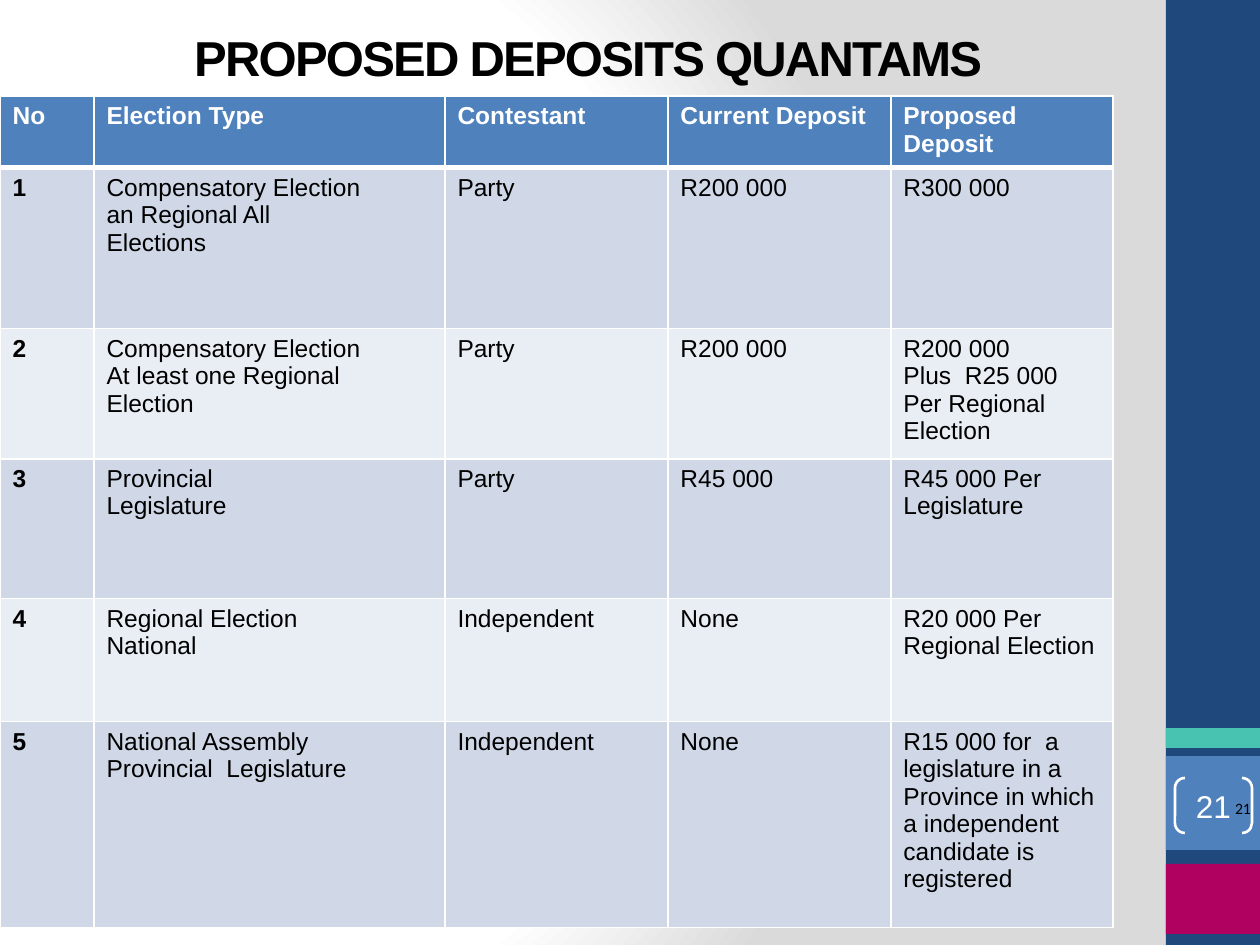
from lxml import etree
from pptx import Presentation
from pptx import util as u
from pptx.dml.color import RGBColor
from pptx.enum import shapes, text
from pptx.oxml import parse_xml
from pptx.oxml.ns import nsdecls, qn

COLORS = {
    "navy": "1F497D", "blue": "4F81BD", "teal": "48C3B1", "magenta": "B00060",
    "white": "FFFFFF", "black": "000000", "gray": "DADADA",
    "odd": "D0D8E8", "even": "E9EDF4",
}
COLUMNS = [94, 351, 223, 223, 222]
ROW_HEIGHTS = [67, 161, 123, 140, 123, 206]
DEPOSITS = [
    ["No", "Election Type", "Contestant", "Current Deposit", "Proposed Deposit"],
    ["1", "Compensatory Election\nan Regional All\nElections", "Party",
     "R200 000", "R300 000"],
    ["2", "Compensatory Election\nAt least one Regional Election", "Party",
     "R200 000", "R200 000\nPlus  R25 000 Per Regional Election"],
    ["3", "Provincial\nLegislature", "Party", "R45 000", "R45 000 Per Legislature"],
    ["4", "Regional Election\nNational", "Independent", "None",
     "R20 000 Per Regional Election"],
    ["5", "National Assembly\nProvincial  Legislature", "Independent", "None",
     "R15 000 for  a legislature in a Province in which a independent "
     "candidate is registered"],
]


def px(n):
    return u.Emu(n * 914400 // 126)


def rgb(name):
    return RGBColor.from_string(COLORS[name])


class Deck:
    font = "Arial"

    def __init__(self):
        self.prs = Presentation()
        self.prs.slide_width, self.prs.slide_height = px(1260), px(945)
        self.s = self.prs.slides.add_slide(self.prs.slide_layouts[5])

    def background(self, stops, focus):
        self.s.background.fill.gradient()
        old = self.s.element.find(".//" + qn("a:gradFill"))
        marks = "".join(
            f'<a:gs pos="{pos * 1000}"><a:srgbClr val="{COLORS[c]}"/></a:gs>'
            for pos, c in stops)
        l, t, r, b = (n * 1000 for n in focus)
        new = parse_xml(
            f'<a:gradFill {nsdecls("a")} rotWithShape="1"><a:gsLst>{marks}</a:gsLst>'
            f'<a:path path="circle"><a:fillToRect l="{l}" t="{t}" r="{r}" b="{b}"/>'
            f'</a:path></a:gradFill>')
        old.getparent().replace(old, new)

    def put_text(self, tf, words, size, color, bold=False, align=None, font=None):
        tf.text = words
        for p in tf.paragraphs:
            p.alignment = align
            for r in p.runs:
                r.font.name, r.font.size = font or self.font, u.Pt(size)
                r.font.bold, r.font.color.rgb = bold, rgb(color)

    def place(self, sp, box):
        sp.left, sp.top, sp.width, sp.height = map(px, box)

    def frame(self, tf, margins):
        tf.word_wrap, tf.vertical_anchor = True, text.MSO_ANCHOR.MIDDLE
        (tf.margin_left, tf.margin_top,
         tf.margin_right, tf.margin_bottom) = map(px, margins)

    def title(self, words, box):
        sp = self.s.shapes.title
        self.place(sp, box)
        tf = sp.text_frame
        tf.auto_size = text.MSO_AUTO_SIZE.NONE
        self.frame(tf, (13, 6, 13, 6))
        self.put_text(tf, words, 28, "black", True, text.PP_ALIGN.CENTER)
        rPr = tf.paragraphs[0].runs[0]._r.get_or_add_rPr()
        rPr.set("spc", "-100")

    def band(self, box, color):
        sp = self.s.shapes.add_shape(shapes.MSO_SHAPE.RECTANGLE, *map(px, box))
        sp.shadow.inherit = False
        sp.fill.solid()
        sp.fill.fore_color.rgb = rgb(color)
        sp.line.fill.background()

    def brackets(self, words, box):
        sp = self.s.shapes.add_shape(shapes.MSO_SHAPE.DOUBLE_BRACKET, *map(px, box))
        sp.shadow.inherit = False
        sp.adjustments[0] = 0.18
        sp.fill.background()
        sp.line.color.rgb, sp.line.width = rgb("white"), u.Pt(1.5)
        self.frame(sp.text_frame, (0, 0, 0, 0))
        self.put_text(sp.text_frame, words, 18, "white", align=text.PP_ALIGN.CENTER)

    def label(self, words, box):
        tf = self.s.shapes.add_textbox(*map(px, box)).text_frame
        self.frame(tf, (5, 5, 9, 5))
        self.put_text(tf, words, 9, "black", align=text.PP_ALIGN.RIGHT, font="Calibri")

    def borders(self, cell, bottom, top):
        tcPr = cell._tc.get_or_add_tcPr()
        for side, width in (("L", 1), ("R", 1), ("T", top), ("B", bottom)):
            ln = etree.SubElement(tcPr, qn(f"a:ln{side}"), w=str(u.Pt(width)))
            fill = etree.SubElement(ln, qn("a:solidFill"))
            etree.SubElement(fill, qn("a:srgbClr"), val=COLORS["white"])

    def table(self, rows, left, top, widths, heights):
        box = (left, top, sum(widths), sum(heights))
        tbl = self.s.shapes.add_table(len(rows), len(widths), *map(px, box)).table
        for col, width in zip(tbl.columns, widths):
            col.width = px(width)
        for i, (row, height) in enumerate(zip(rows, heights)):
            tbl.rows[i].height = px(height)
            head = i == 0
            fill = "blue" if head else "odd" if i % 2 else "even"
            for j, words in enumerate(row):
                cell = tbl.cell(i, j)
                self.borders(cell, 3 if head else 1, 3 if i == 1 else 1)
                cell.fill.solid()
                cell.fill.fore_color.rgb = rgb(fill)
                self.put_text(cell.text_frame, words, 14,
                              "white" if head else "black", head or j == 0)


def main():
    d = Deck()
    d.background([(0, "white"), (75, "white"), (100, "gray")], (20, 50, 100, 50))
    for top, height, color in [(0, 945, "navy"), (756, 94, "blue"),
                               (728, 20, "teal"), (864, 70, "magenta")]:
        d.band((1166, top, 94, height), color)
    d.title("PROPOSED DEPOSITS QUANTAMS", (63, 38, 1050, 38))
    d.brackets("21", (1175, 778, 77, 55))
    d.label("21", (1162, 789, 98, 38))
    d.table(DEPOSITS, 0, 96, COLUMNS, ROW_HEIGHTS)
    d.prs.save("out.pptx")


if __name__ == "__main__":
    main()
